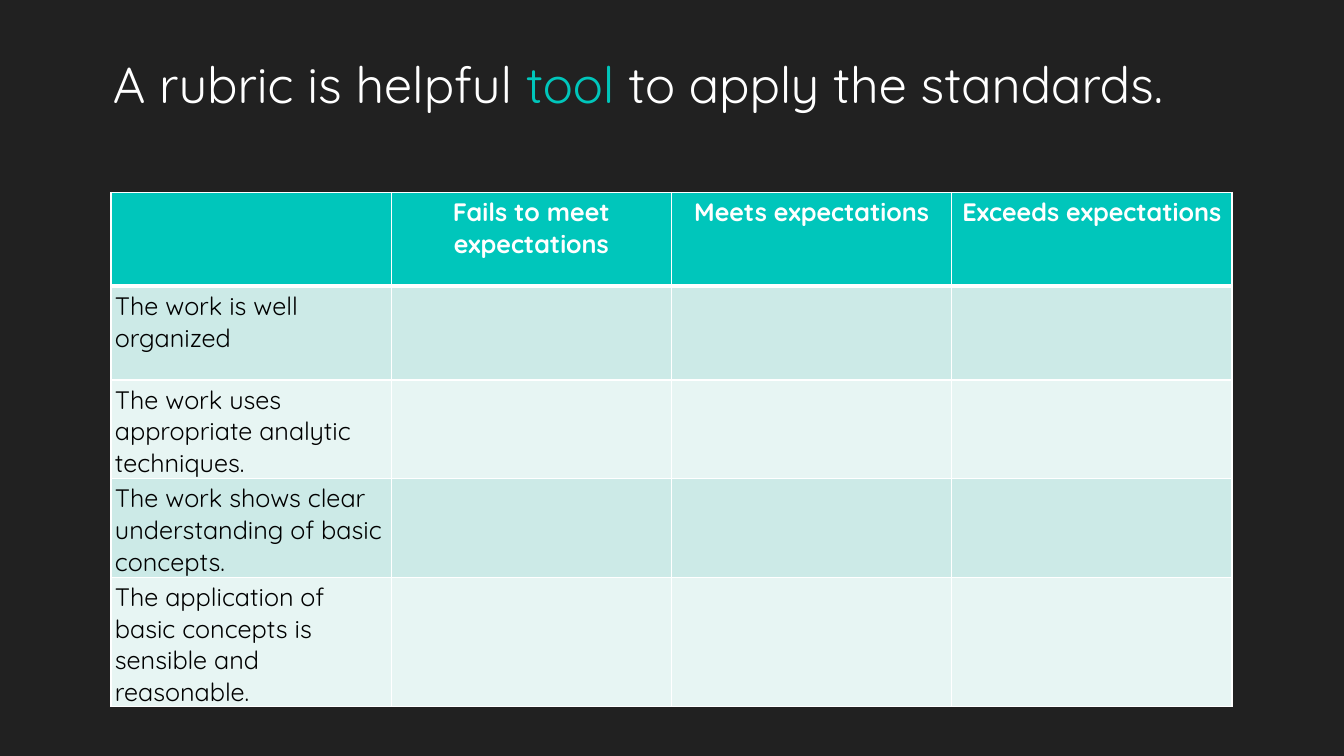
from dataclasses import dataclass

from lxml.etree import SubElement
from pptx import Presentation
from pptx.dml.color import RGBColor as RGB
from pptx.enum.text import PP_ALIGN as Align
from pptx.oxml.ns import qn
from pptx.util import Inches, Pt


@dataclass(frozen=True)
class Theme:
    """Colours, font and type sizes of the slide."""
    back: str = "212121"
    teal: str = "00C6BB"
    white: str = "FFFFFF"
    black: str = "000000"
    bands: tuple = ("CCEAE7", "E7F5F3")
    font: str = "Quicksand"
    title: int = 36
    body: int = 18


THEME = Theme()
TITLE = (
    ("A rubric is helpful ", THEME.white),
    ("tool ", THEME.teal),
    ("to apply the standards.", THEME.white),
)
LEVELS = ("", "Fails to meet expectations", "Meets expectations", "Exceeds expectations")
CRITERIA = (
    "The work is well organized",
    "The work uses appropriate analytic techniques.",
    "The work shows clear understanding of basic concepts.",
    "The application of basic concepts is sensible and reasonable.",
)


def add_run(para, text, size, color, bold=False):
    """Add one styled run to a paragraph."""
    run = para.add_run()
    run.text = text
    font = run.font
    font.name, font.size, font.bold = THEME.font, Pt(size), bold
    font.color.rgb = RGB.from_string(color)


def add_title(slide):
    """Add the heading with its accented word."""
    box = slide.shapes.add_textbox(Inches(1.02), Inches(0.48), Inches(10.98), Inches(1.31))
    frame = box.text_frame
    frame.word_wrap = True
    for text, color in TITLE:
        add_run(frame.paragraphs[0], text, THEME.title, color)


def set_edges(cell, top, bottom):
    """Draw white cell borders, with top and bottom widths in points."""
    props = cell._tc.get_or_add_tcPr()
    for side, width in (("L", 1), ("R", 1), ("T", top), ("B", bottom)):
        line = SubElement(props, qn(f"a:ln{side}"), w=str(Pt(width)))
        fill = SubElement(line, qn("a:solidFill"))
        SubElement(fill, qn("a:srgbClr"), val=THEME.white)


def fill_cell(cell, text, row):
    """Style one cell by its row and write its text."""
    head = row == 0
    set_edges(cell, top=3 if row == 1 else 1, bottom=3 if head else 1)
    cell.fill.solid()
    cell.fill.fore_color.rgb = RGB.from_string(THEME.teal if head else THEME.bands[(row - 1) % 2])
    cell.margin_left = cell.margin_right = Inches(0.04)
    cell.margin_top = cell.margin_bottom = Inches(0.04)
    if text:
        para = cell.text_frame.paragraphs[0]
        para.alignment = Align.CENTER if head else Align.LEFT
        add_run(para, text, THEME.body, THEME.white if head else THEME.black, head)


def add_rubric(slide):
    """Add the rubric table with criteria down and levels across."""
    rows = [LEVELS] + [(text, "", "", "") for text in CRITERIA]
    high, wide = Inches(0.93), Inches(2.78)
    table = slide.shapes.add_table(
        len(rows), len(LEVELS), Inches(1.1), Inches(1.91),
        wide * len(LEVELS), high * len(rows),
    ).table
    for row, texts in enumerate(rows):
        table.rows[row].height = high
        for col, text in enumerate(texts):
            fill_cell(table.cell(row, col), text, row)


def main():
    """Build and save the slide."""
    deck = Presentation()
    deck.slide_width, deck.slide_height = Inches(13.33), Inches(7.5)
    slide = deck.slides.add_slide(deck.slide_layouts[6])
    back = slide.background.fill
    back.solid()
    back.fore_color.rgb = RGB.from_string(THEME.back)
    add_title(slide)
    add_rubric(slide)
    deck.save("out.pptx")


if __name__ == "__main__":
    main()
